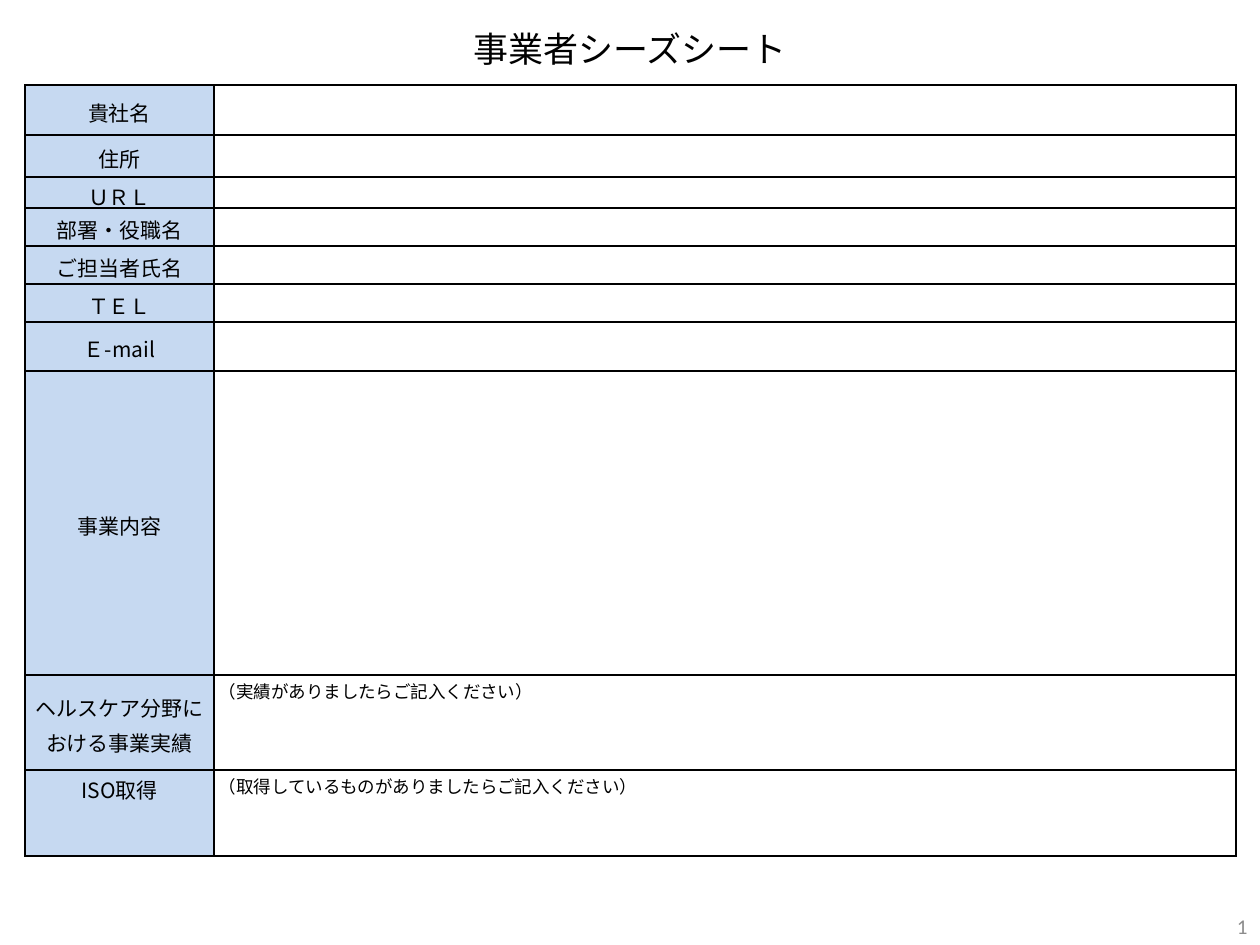
from lxml import etree
from pptx import Presentation
from pptx.dml.color import RGBColor
from pptx.enum.text import MSO_ANCHOR, PP_ALIGN
from pptx.oxml.ns import qn
from pptx.util import Emu, Pt

LEFT, MID, RIGHT = PP_ALIGN.LEFT, PP_ALIGN.CENTER, PP_ALIGN.RIGHT
TOP, CENTER = MSO_ANCHOR.TOP, MSO_ANCHOR.MIDDLE
BLACK = RGBColor(0x00, 0x00, 0x00)
GRAY = RGBColor(0x8C, 0x8C, 0x8C)
BLUE = RGBColor(0xC6, 0xD9, 0xF1)
WHITE = RGBColor(0xFF, 0xFF, 0xFF)
GOTHIC, LATIN = "Noto Sans CJK JP", "Calibri"

ROWS = [
    (50, "貴社名", "", CENTER),
    (42, "住所", "", CENTER),
    (31, "ＵＲＬ", "", CENTER),
    (38, "部署・役職名", "", CENTER),
    (38, "ご担当者氏名", "", CENTER),
    (38, "ＴＥＬ", "", CENTER),
    (49, "Ｅ-mail", "", CENTER),
    (304, "事業内容", "", CENTER),
    (95, "ヘルスケア分野における事業実績", "（実績がありましたらご記入ください）", CENTER),
    (86, "ISO取得", "（取得しているものがありましたらご記入ください）", TOP),
]


def px(count):
    return Emu(round(count * 914400 / 126))


def write(frame, text, size=12, face=GOTHIC, color=BLACK, align=LEFT, space=None):
    para = frame.paragraphs[0]
    para.alignment = align
    para.line_spacing = space
    if not text:
        para._p.get_or_add_endParaRPr().set("sz", str(size * 100))
        return
    run = para.add_run()
    run.text = text
    font = run.font
    font.size, font.name = Pt(size), face
    font.color.rgb = color
    etree.SubElement(run._r.get_or_add_rPr(), qn("a:ea"), typeface=face)


class Sheet:
    """Holds the slide and the form style, and draws each kind of element."""

    def __init__(self, slide, line=BLACK, label=BLUE, field=WHITE):
        self.slide = slide
        self.line, self.label, self.field = line, label, field

    def text(self, box, text, **style):
        frame = self.slide.shapes.add_textbox(*map(px, box)).text_frame
        frame.word_wrap = True
        frame.vertical_anchor = CENTER
        write(frame, text, **style)

    def border(self, cell):
        props = cell._tc.get_or_add_tcPr()
        for place, side in enumerate(("lnL", "lnR", "lnT", "lnB")):
            edge = etree.Element(qn("a:" + side), w=str(Pt(1)))
            fill = etree.SubElement(edge, qn("a:solidFill"))
            etree.SubElement(fill, qn("a:srgbClr"), val=str(self.line))
            props.insert(place, edge)

    def cell(self, cell, text, fill, anchor, **style):
        cell.margin_left = cell.margin_right = px(5)
        cell.margin_top = cell.margin_bottom = 0
        cell.vertical_anchor = anchor
        cell.fill.solid()
        cell.fill.fore_color.rgb = fill
        self.border(cell)
        write(cell.text_frame, text, space=1.15, **style)

    def form(self, left, top, widths, rows):
        height = sum(row[0] for row in rows)
        box = map(px, (left, top, sum(widths), height))
        table = self.slide.shapes.add_table(len(rows), len(widths), *box).table
        for column, width in zip(table.columns, widths):
            column.width = px(width)
        for row, (tall, name, hint, anchor) in zip(table.rows, rows):
            row.height = px(tall)
            label, field = row.cells
            self.cell(label, name, self.label, anchor, align=MID)
            self.cell(field, hint, self.field, TOP, size=10)


def main():
    deck = Presentation()
    deck.slide_width, deck.slide_height = px(1260), px(945)
    sheet = Sheet(deck.slides.add_slide(deck.slide_layouts[6]))
    sheet.text((0, 21, 1260, 55), "事業者シーズシート", size=20, align=MID)
    sheet.form(25, 85, (189, 1022), ROWS)
    sheet.text((966, 908, 294, 37), "1", face=LATIN, color=GRAY, align=RIGHT)
    deck.save("out.pptx")


if __name__ == "__main__":
    main()
